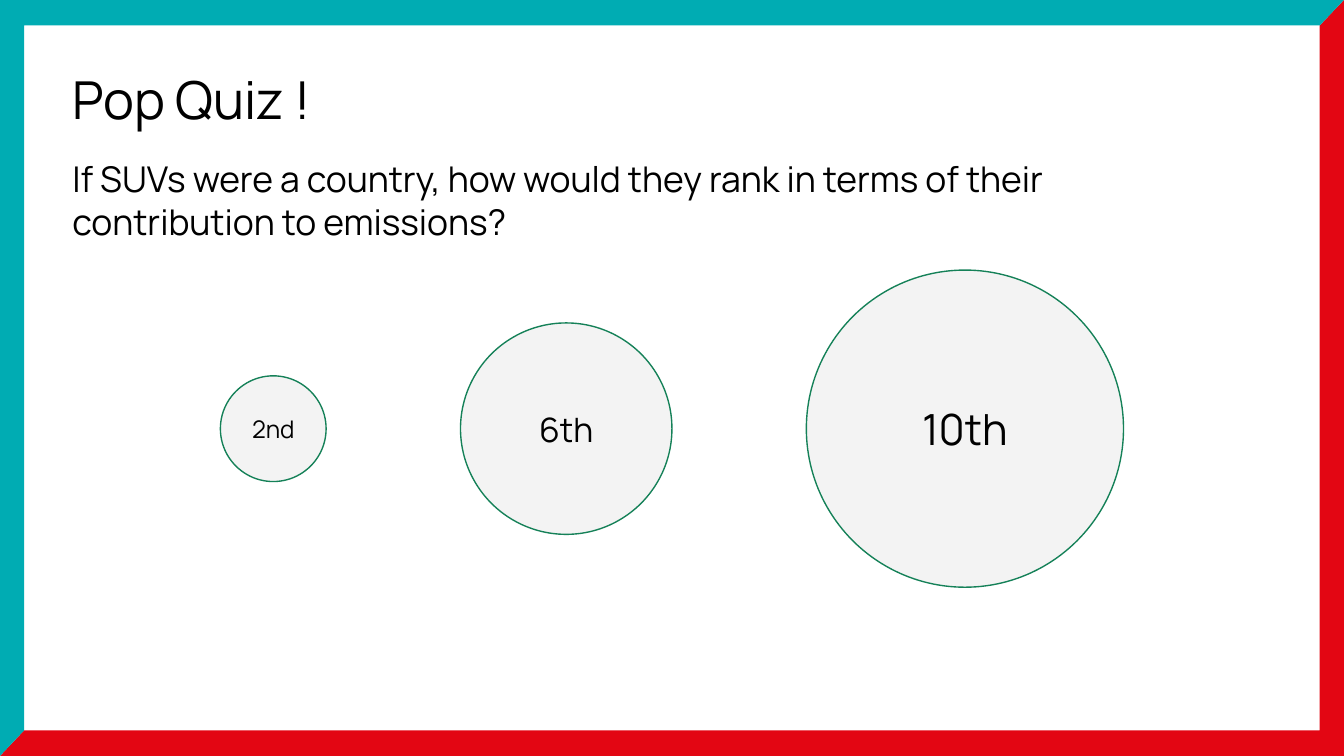
import pptx
import pptx.util
import pptx.dml.color
import pptx.enum.shapes
import pptx.enum.text

# Content
TITLE = "Pop Quiz !"
ASK = ("If SUVs were a country, how would they rank in terms of "
       "their contribution to emissions?")
RANKS = [("2nd", 13), ("6th", 18), ("10th", 23)]

# Theme
THEME = {"font": "Manrope", "ink": "000000", "teal": "00ACB3", "red": "E30613",
         "disc": "F3F3F3", "edge": "158158", "title": 28, "ask": 19, "line": 0.75}

# Layout in inches
W = 10
H = W * 9 / 16
RIM = 0.18                       # frame thickness at the sides
TOP = 0.19                       # frame thickness above and below
LEFT = 0.44                      # text column
UNIT, GAP = 2.36 / 3, 1          # smallest disc, space between discs
START, MID = 1.64, 3.19          # first disc's left side, shared centre line

inch = pptx.util.Inches
deck = pptx.Presentation()
deck.slide_width, deck.slide_height = inch(W), inch(H)
slide = deck.slides.add_slide(deck.slide_layouts[6])
shapes = slide.shapes


def tint(name):
    return pptx.dml.color.RGBColor.from_string(THEME[name])


def paint(shape, fill, edge=None):
    shape.shadow.inherit = False
    shape.fill.solid()
    shape.fill.fore_color.rgb = tint(fill)
    if edge:
        shape.line.color.rgb = tint(edge)
        shape.line.width = pptx.util.Pt(THEME["line"])
    else:
        shape.line.fill.background()


def write(shape, text, size, align=pptx.enum.text.PP_ALIGN.LEFT):
    frame = shape.text_frame
    frame.word_wrap = True
    frame.margin_left = frame.margin_right = inch(0.1)
    frame.margin_top = frame.margin_bottom = inch(0.1)
    para = frame.paragraphs[0]
    para.alignment = align
    run = para.add_run()
    run.text = text
    run.font.name = THEME["font"]
    run.font.size = pptx.util.Pt(size)
    run.font.color.rgb = tint("ink")


# Frame: two mitred halves around the white page
halves = [("red", [(W, 0), (W, H), (0, H), (RIM, H - TOP),
                   (W - RIM, H - TOP), (W - RIM, TOP)]),
          ("teal", [(0, 0), (W, 0), (W - RIM, TOP), (RIM, TOP),
                    (RIM, H - TOP), (0, H)])]
for hue, points in halves:
    dots = [(inch(x), inch(y)) for x, y in points]
    pen = shapes.build_freeform(*dots[0])
    pen.add_line_segments(dots[1:], close=True)
    paint(pen.convert_to_shape(), hue)

# Title and question
for text, size, top, wide, high in [(TITLE, THEME["title"], 0.4, 4.64, 0.67),
                                    (ASK, THEME["ask"], 1.07, 8.84, 0.84)]:
    write(shapes.add_textbox(inch(LEFT), inch(top), inch(wide), inch(high)),
          text, size)

# Answers: discs growing by one unit, evenly spaced on one centre line
left = START
for step, (text, size) in enumerate(RANKS, 1):
    side = step * UNIT
    disc = shapes.add_shape(pptx.enum.shapes.MSO_SHAPE.OVAL, inch(left),
                            inch(MID - side / 2), inch(side), inch(side))
    paint(disc, "disc", "edge")
    disc.text_frame.vertical_anchor = pptx.enum.text.MSO_ANCHOR.MIDDLE
    write(disc, text, size, pptx.enum.text.PP_ALIGN.CENTER)
    left += side + GAP

deck.save("out.pptx")
